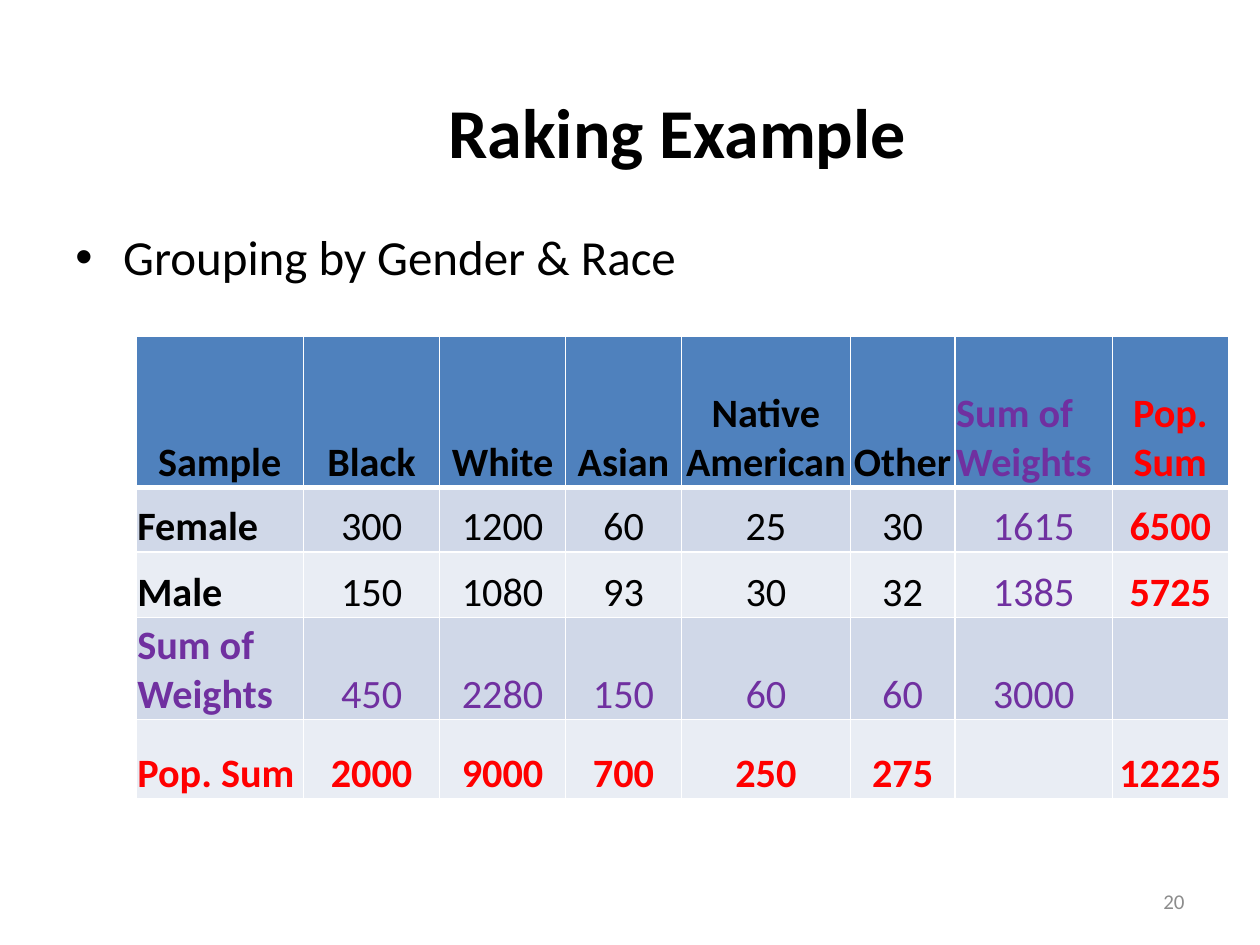
from dataclasses import dataclass

from lxml import etree
from pptx import Presentation
from pptx.dml.color import RGBColor
from pptx.enum.text import MSO_ANCHOR, PP_ALIGN
from pptx.oxml.ns import qn
from pptx.util import Inches, Pt

LEFT, CENTER, RIGHT = PP_ALIGN.LEFT, PP_ALIGN.CENTER, PP_ALIGN.RIGHT
TOP, MIDDLE, BOTTOM = MSO_ANCHOR.TOP, MSO_ANCHOR.MIDDLE, MSO_ANCHOR.BOTTOM


@dataclass(frozen=True)
class Theme:
    """Colours, font and type sizes of the slide."""
    font: str = "Calibri"
    ink: str = "000000"
    weights: str = "7030A0"
    population: str = "FF0000"
    muted: str = "8C8C8C"
    rule: str = "FFFFFF"
    header: str = "4F81BD"
    bands: tuple = ("D0D8E8", "E9EDF4")
    title_size: int = 40
    body_size: int = 28
    table_size: int = 23
    number_size: int = 12


THEME = Theme()
COLUMN_WIDTHS = (1.33, 1.08, 1, 0.92, 1.34, 0.83, 1.25, 0.92)
ROW_HEIGHTS = (1.2, 0.51, 0.52, 0.81, 0.63)
ROWS = (
    ("Sample", "Black", "White", "Asian", "Native American", "Other", "Sum of Weights", "Pop. Sum"),
    ("Female", "300", "1200", "60", "25", "30", "1615", "6500"),
    ("Male", "150", "1080", "93", "30", "32", "1385", "5725"),
    ("Sum of Weights", "450", "2280", "150", "60", "60", "3000", ""),
    ("Pop. Sum", "2000", "9000", "700", "250", "275", "", "12225"),
)
WEIGHTS_ROW, POPULATION_ROW = 3, 4
WEIGHTS_COLUMN, POPULATION_COLUMN = 6, 7


def add_span(para, text, size, color, bold=False):
    """Add one styled run to a paragraph."""
    span = para.add_run()
    span.text = text
    span.font.name = THEME.font
    span.font.size = Pt(size)
    span.font.bold = bold
    span.font.color.rgb = RGBColor.from_string(color)


def add_line(page, box, text, size, color, align, anchor, bold=False):
    """Place a one-paragraph text box and return its paragraph."""
    frame = page.shapes.add_textbox(*map(Inches, box)).text_frame
    frame.word_wrap = True
    frame.vertical_anchor = anchor
    para = frame.paragraphs[0]
    para.alignment = align
    add_span(para, text, size, color, bold)
    return para


def add_title(page, box):
    """Place the centred slide title."""
    add_line(page, box, "Raking Example", THEME.title_size, THEME.ink, CENTER, MIDDLE, True)


def add_body(page, box):
    """Place the bulleted statement."""
    para = add_line(page, box, "Grouping by Gender & Race", THEME.body_size, THEME.ink, LEFT, TOP)
    para.space_before = Pt(THEME.body_size * 0.2)
    properties = para._p.get_or_add_pPr()
    properties.set("marL", str(Inches(0.38)))
    properties.set("indent", str(-Inches(0.38)))
    etree.SubElement(properties, qn("a:buFont"), typeface="Arial")
    etree.SubElement(properties, qn("a:buChar"), char="•")


def add_page_number(page, box):
    """Place the slide number."""
    add_line(page, box, "20", THEME.number_size, THEME.muted, RIGHT, MIDDLE)


def set_borders(cell, top, bottom):
    """Draw the four cell borders, with top and bottom widths in points."""
    properties = cell._tc.get_or_add_tcPr()
    widths = (("a:lnL", 1), ("a:lnR", 1), ("a:lnT", top), ("a:lnB", bottom))
    for position, (tag, width) in enumerate(widths):
        line = etree.Element(qn(tag), w=str(Pt(width)))
        fill = etree.SubElement(line, qn("a:solidFill"))
        etree.SubElement(fill, qn("a:srgbClr"), val=THEME.rule)
        properties.insert(position, line)


def cell_color(row, column):
    """Return the text colour that marks sums of weights and population sums."""
    if POPULATION_ROW == row or POPULATION_COLUMN == column:
        return THEME.population
    if WEIGHTS_ROW == row or WEIGHTS_COLUMN == column:
        return THEME.weights
    return THEME.ink


def fill_cell(cell, row, column, text):
    """Style one table cell and write its text."""
    cell.fill.solid()
    fill = THEME.bands[(row - 1) % 2] if row else THEME.header
    cell.fill.fore_color.rgb = RGBColor.from_string(fill)
    cell.margin_left = cell.margin_right = cell.margin_top = Inches(0.01)
    cell.margin_bottom = 0
    cell.vertical_anchor = BOTTOM
    set_borders(cell, 3 if row == 1 else 1, 3 if row == 0 else 1)
    if text:
        para = cell.text_frame.paragraphs[0]
        flush_left = (row > 0 and column == 0) or (row == 0 and column == WEIGHTS_COLUMN)
        para.alignment = LEFT if flush_left else CENTER
        bold = row in (0, POPULATION_ROW) or column in (0, POPULATION_COLUMN)
        add_span(para, text, THEME.table_size, cell_color(row, column), bold)


def add_raking_table(page, box):
    """Place the table of sample counts and population sums."""
    table = page.shapes.add_table(len(ROWS), len(COLUMN_WIDTHS), *map(Inches, box)).table
    for column, width in zip(table.columns, COLUMN_WIDTHS):
        column.width = Inches(width)
    for row, height in zip(table.rows, ROW_HEIGHTS):
        row.height = Inches(height)
    for row, texts in enumerate(ROWS):
        for column, text in enumerate(texts):
            fill_cell(table.cell(row, column), row, column, text)


def main():
    """Build and save the deck."""
    deck = Presentation()
    deck.slide_width, deck.slide_height = Inches(10), Inches(7.5)
    page = deck.slides.add_slide(deck.slide_layouts[6])
    add_title(page, (1, 0.17, 8.75, 1.73))
    add_body(page, (0.5, 1.75, 9, 4.95))
    add_page_number(page, (7.17, 6.95, 2.33, 0.4))
    add_raking_table(page, (1.08, 2.67, sum(COLUMN_WIDTHS), sum(ROW_HEIGHTS)))
    deck.save("out.pptx")


if __name__ == "__main__":
    main()
